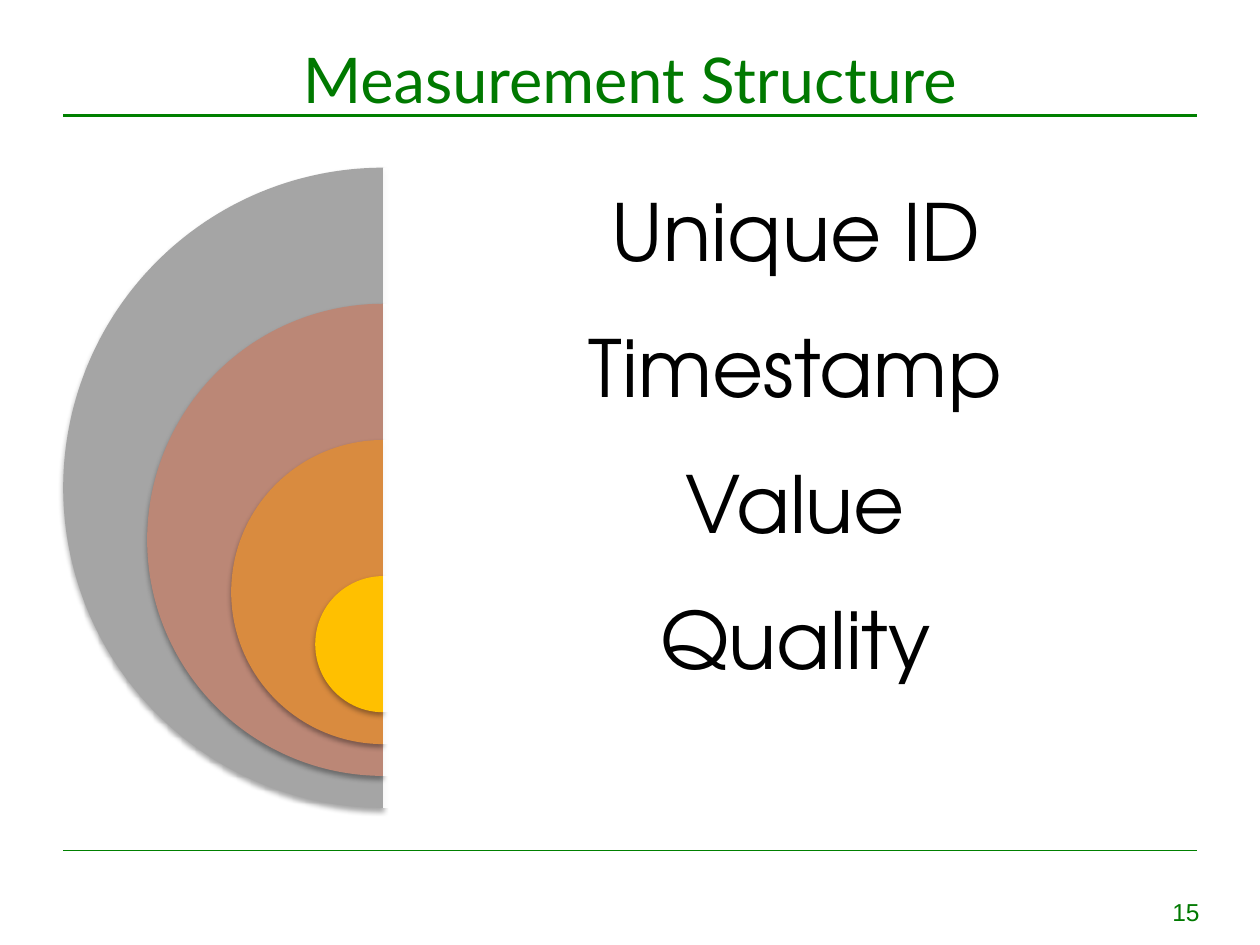
from typing import NamedTuple

from lxml import etree
from pptx import Presentation
from pptx import util as u
from pptx.dml.color import RGBColor
from pptx.enum import shapes as s, text as t
from pptx.oxml import ns, parse_xml

COLORS = {
    "white": "FFFFFF",
    "black": "000000",
    "rule": "008000",
    "green": "007900",
    "gray": "A5A5A5",
    "rose": "BB8776",
    "orange": "D98B3F",
    "gold": "FFC000",
}


class Box(NamedTuple):
    left: float
    top: float
    width: float
    height: float


class Style(NamedTuple):
    font: str
    size: float
    color: str
    align: t.PP_ALIGN = t.PP_ALIGN.CENTER
    inset: float = 3.6
    spacing: float = 1.0


class Ring(NamedTuple):
    label: str
    color: str


RINGS = [
    Ring("Unique ID", "gray"),
    Ring("Timestamp", "rose"),
    Ring("Value", "orange"),
    Ring("Quality", "gold"),
]
TITLE = Style("Lato", 36, "green")
LABEL = Style("TeX Gyre Adventor", 45, "black", inset=13.7, spacing=0.9)
NUMBER = Style("Arial", 14, "green", t.PP_ALIGN.RIGHT, inset=7.2)

CENTER, TOP = 219, 95.8  # flat edge of the half discs, top of the largest
STEP = 77.8  # height of one label row
SHRINK = 96  # loss of diameter from ring to ring
PANEL = 471  # width of the label panel


def rgb(name: str) -> RGBColor:
    return RGBColor.from_string(COLORS[name])


def points(box: Box) -> list[u.Pt]:
    return [u.Pt(value) for value in box]


def add_rule(slide, y: float, weight: float) -> None:
    line = slide.shapes.add_connector(
        s.MSO_CONNECTOR.STRAIGHT, u.Pt(36), u.Pt(y), u.Pt(684), u.Pt(y))
    line.line.color.rgb = rgb("rule")
    line.line.width = u.Pt(weight)
    etree.SubElement(line._element.spPr, ns.qn("a:effectLst"))


def add_text(slide, box: Box, words: str, style: Style) -> None:
    frame = slide.shapes.add_textbox(*points(box)).text_frame
    frame.word_wrap = True
    frame.vertical_anchor = t.MSO_ANCHOR.MIDDLE
    frame.margin_left = frame.margin_right = u.Pt(style.inset)
    frame.margin_top = frame.margin_bottom = u.Pt(style.inset)
    frame.text = words
    para = frame.paragraphs[0]
    para.alignment = style.align
    para.line_spacing = style.spacing
    font = para.runs[0].font
    font.name, font.size = style.font, u.Pt(style.size)
    font.color.rgb = rgb(style.color)


def add_solid(slide, kind: s.MSO_SHAPE, box: Box, color: str):
    shape = slide.shapes.add_shape(kind, *points(box))
    shape.shadow.inherit = False
    shape.fill.solid()
    shape.fill.fore_color.rgb = rgb(color)
    shape.line.fill.background()
    return shape


def add_shadow(shape) -> None:
    """Cast a soft shadow straight down."""
    effects = shape._element.spPr.find(ns.qn("a:effectLst"))
    effects.append(parse_xml(
        f'<a:outerShdw {ns.nsdecls("a")} blurRad="{u.Pt(3.1)}" '
        f'dist="{u.Pt(1.8)}" dir="5400000" rotWithShape="0">'
        f'<a:srgbClr val="{COLORS["black"]}"><a:alpha val="35000"/>'
        '</a:srgbClr></a:outerShdw>'))


def add_ring(slide, index: int, ring: Ring) -> None:
    """Draw a half disc, its pale panel and its label."""
    size = TOP + 270 - SHRINK * index
    top = TOP + STEP * index
    disc = add_solid(slide, s.MSO_SHAPE.PIE,
                     Box(CENTER - size / 2, top, size, size), ring.color)
    disc.adjustments[0], disc.adjustments[1] = 54, 162
    add_shadow(disc)

    panel = add_solid(slide, s.MSO_SHAPE.RECTANGLE,
                      Box(CENTER, top, PANEL, size), "white")
    tint = panel._element.spPr.find(".//" + ns.qn("a:srgbClr"))
    etree.SubElement(tint, ns.qn("a:alpha"), val="90000")
    add_text(slide, Box(CENTER, top, PANEL, STEP), ring.label, LABEL)


def main() -> None:
    deck = Presentation()
    deck.slide_width, deck.slide_height = u.Pt(720), u.Pt(540)
    slide = deck.slides.add_slide(deck.slide_layouts[6])
    add_rule(slide, 66, 1.5)
    add_rule(slide, 486, 0.75)
    add_text(slide, Box(649.4, 509, 43.2, 24.5), "15", NUMBER)
    add_text(slide, Box(36, 0, 648, 90), "Measurement Structure", TITLE)
    for index, ring in enumerate(RINGS):
        add_ring(slide, index, ring)
    deck.save("out.pptx")


if __name__ == "__main__":
    main()
